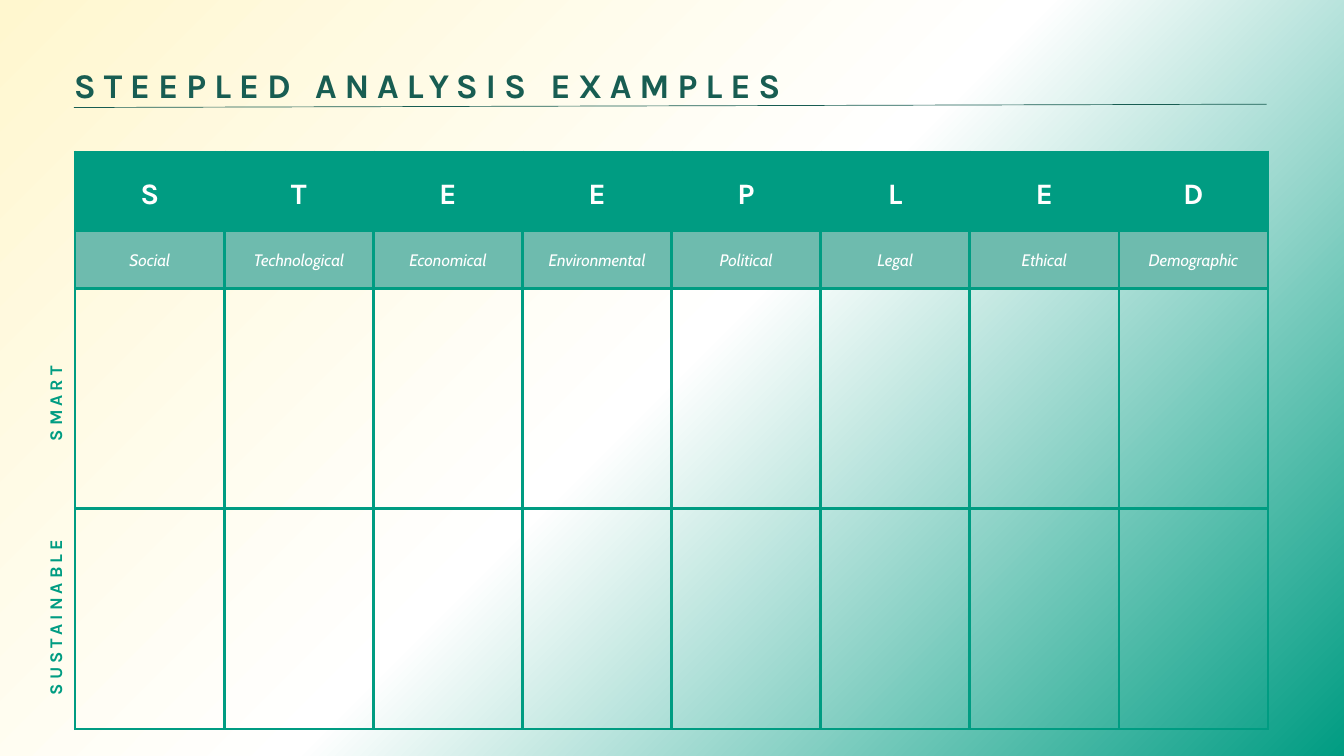
from dataclasses import dataclass

from pptx import Presentation
from pptx.dml.color import RGBColor as Color
from pptx.enum.shapes import MSO_CONNECTOR as Connector
from pptx.enum.text import MSO_ANCHOR as Anchor, MSO_AUTO_SIZE as AutoSize, PP_ALIGN as Align
from pptx.oxml import parse_xml
from pptx.oxml.ns import nsdecls
from pptx.util import Pt


@dataclass(frozen=True)
class TextStyle:
    size: float
    leading: float
    color: str
    font: str = "Karla"
    bold: bool = True
    italic: bool = False
    spacing: float = 0


@dataclass(frozen=True)
class Theme:
    cream: str = "FFF7CF"
    white: str = "FFFFFF"
    green: str = "009C82"
    sage: str = "6EBBAE"
    dark: str = "185D52"
    title: TextStyle = TextStyle(37.1, 52, dark, spacing=8.4)
    label: TextStyle = TextStyle(19.1, 26.7, green, spacing=4.3)
    letter: TextStyle = TextStyle(31.8, 44.5, white)
    factor: TextStyle = TextStyle(17.8, 24.9, white, "Cabin", False, True)
    border: float = 3
    rule: float = 0.75
    padding: float = 15


class SlideBuilder:
    def __init__(self, page, theme):
        self.page = page
        self.theme = theme

    def background(self):
        theme = self.theme
        stops = [(0, theme.cream, 80), (50, theme.white, 100), (100, theme.green, 50)]
        stop_xml = "".join(
            f'<a:gs pos="{position * 1000}"><a:srgbClr val="{color}">'
            f'<a:alpha val="{alpha * 1000}"/></a:srgbClr></a:gs>'
            for position, color, alpha in stops
        )
        self.page.element.cSld.insert(0, parse_xml(
            f'<p:bg {nsdecls("p", "a")}><p:bgPr><a:gradFill><a:gsLst>{stop_xml}</a:gsLst>'
            '<a:path path="circle"><a:fillToRect l="0" t="0" r="100000" b="100000"/></a:path>'
            '</a:gradFill><a:effectLst/></p:bgPr></p:bg>'
        ))

    def set_text(self, frame, text, style, align=Align.LEFT):
        frame.text = text
        para = frame.paragraphs[0]
        para.alignment = align
        para.line_spacing = Pt(style.leading)
        span = para.runs[0]
        font = span.font
        font.name = style.font
        font.size = Pt(style.size)
        font.bold = style.bold
        font.italic = style.italic
        font.color.rgb = Color.from_string(style.color)
        if style.spacing:
            span._r.get_or_add_rPr().set("spc", str(round(style.spacing * 100)))

    def fit(self, box, text, style):
        frame = box.text_frame
        frame.margin_left = frame.margin_right = frame.margin_top = frame.margin_bottom = 0
        frame.word_wrap = True
        frame.vertical_anchor = Anchor.TOP
        frame.auto_size = AutoSize.SHAPE_TO_FIT_TEXT
        self.set_text(frame, text, style)

    def title(self, text, left, top, width, height):
        box = self.page.shapes.title
        box.left, box.top, box.width, box.height = Pt(left), Pt(top), Pt(width), Pt(height)
        self.fit(box, text, self.theme.title)

    def side_label(self, text, center_x, center_y, length, height):
        box = self.page.shapes.add_textbox(
            Pt(center_x - length / 2), Pt(center_y - height / 2), Pt(length), Pt(height))
        box.rotation = 270
        self.fit(box, text, self.theme.label)

    def rule(self, start_x, start_y, end_x, end_y):
        line = self.page.shapes.add_connector(
            Connector.STRAIGHT, Pt(start_x), Pt(start_y), Pt(end_x), Pt(end_y))
        line.line.color.rgb = Color.from_string(self.theme.dark)
        line.line.width = Pt(self.theme.rule)
        line._element.spPr.append(parse_xml(f'<a:effectLst {nsdecls("a")}/>'))

    def cell(self, cell, text="", style=None, fill=None):
        cell.margin_left = cell.margin_right = Pt(self.theme.padding)
        cell.margin_top = cell.margin_bottom = Pt(self.theme.padding)
        cell.vertical_anchor = Anchor.MIDDLE
        if text:
            self.set_text(cell.text_frame, text, style, Align.CENTER)
        if fill:
            cell.fill.solid()
            cell.fill.fore_color.rgb = Color.from_string(fill)
        else:
            cell.fill.background()
        properties = cell._tc.get_or_add_tcPr()
        for index, side in enumerate(("lnL", "lnR", "lnT", "lnB")):
            properties.insert(index, parse_xml(
                f'<a:{side} {nsdecls("a")} w="{Pt(self.theme.border)}"><a:solidFill>'
                f'<a:srgbClr val="{self.theme.green}"/></a:solidFill></a:{side}>'
            ))

    def matrix(self, factors, left, top, width, row_heights):
        theme = self.theme
        columns = len(factors)
        table = self.page.shapes.add_table(
            len(row_heights), columns, Pt(left), Pt(top), Pt(width), Pt(sum(row_heights))).table
        table.first_row = table.horz_banding = False
        for row, height in zip(table.rows, row_heights):
            row.height = Pt(height)
        for index, factor in enumerate(factors):
            table.columns[index].width = Pt(width / columns)
            self.cell(table.cell(0, index), factor[0], theme.letter, theme.green)
            self.cell(table.cell(1, index), factor, theme.factor, theme.sage)
            for row in range(2, len(row_heights)):
                self.cell(table.cell(row, index))


def main():
    deck = Presentation()
    deck.slide_width, deck.slide_height = Pt(1440), Pt(810)
    builder = SlideBuilder(deck.slides.add_slide(deck.slide_layouts[5]), Theme())
    builder.background()
    builder.title("STEEPLED ANALYSIS EXAMPLES", 79.2, 60.5, 1278, 51)
    builder.side_label("SMART", 56.2, 415.8, 113.8, 25.2)
    builder.side_label("SUSTAINABLE", 56.2, 637.6, 214.6, 25.2)
    builder.rule(79.2, 115.2, 1357.2, 111.6)
    factors = ["Social", "Technological", "Economical", "Environmental",
               "Political", "Legal", "Ethical", "Demographic"]
    builder.matrix(factors, 80.6, 162.7, 1278, [84.3, 61.9, 236, 236])
    deck.save("out.pptx")


if __name__ == "__main__":
    main()
